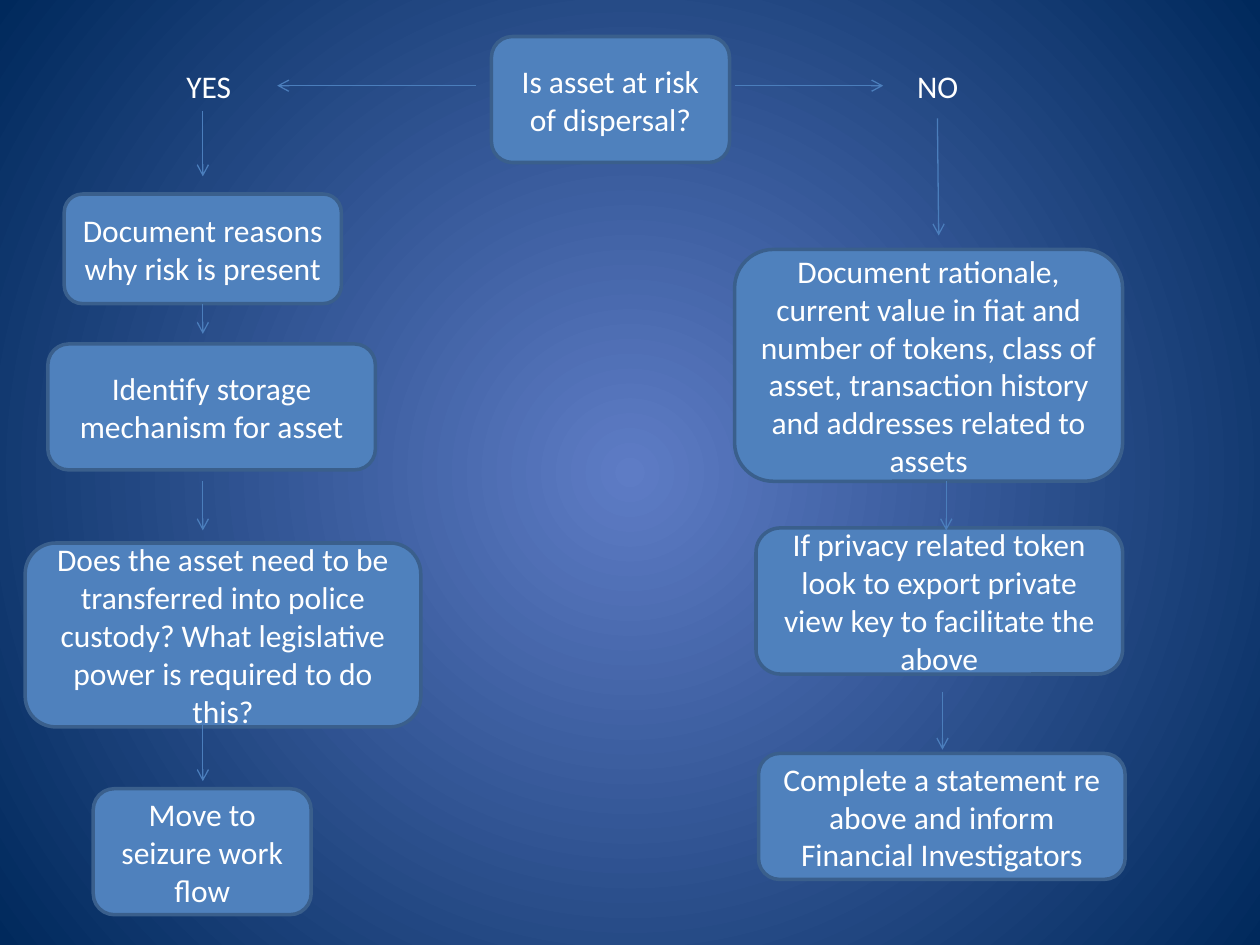
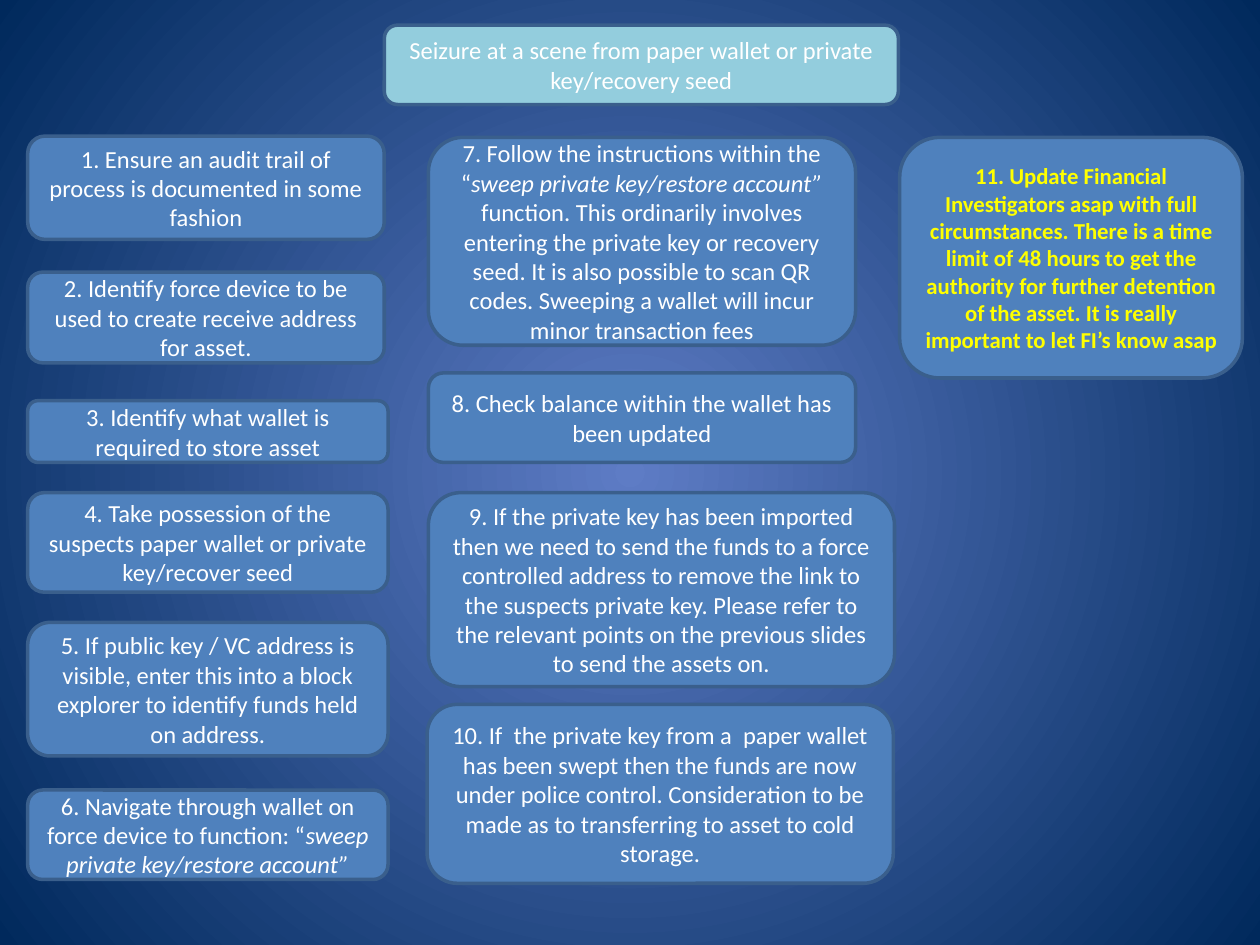
from dataclasses import dataclass

import pptx
import pptx.dml.color
import pptx.enum.shapes
import pptx.enum.text
import pptx.oxml.ns
import pptx.oxml.xmlchemy
import pptx.presentation
import pptx.shapes.autoshape
import pptx.shapes.connector
import pptx.slide
import pptx.text.text
import pptx.util
from lxml import etree
from pptx.util import Inches

FONT = "Calibri"
WHITE = "FFFFFF"
YELLOW = "FFFF00"
BOX_FILL = "4F81BD"
BOX_LINE = "3A5F8C"
HEADING_FILL = "93CDDD"
ARROW_LINE = "4B7EBC"
GLOW_CENTRE = "5E7CC5"
GLOW_EDGE = "00295C"

YES_X = 1.61
ANSWER_Y = 0.68
BOTTOM = 2


@dataclass(frozen=True)
class Box:
    text: str
    left: float
    top: float
    width: float
    height: float
    size: int = 18
    fill: str = BOX_FILL
    color: str = WHITE
    bold: bool = False


@dataclass(frozen=True)
class Answer:
    text: str
    left: float
    width: float


@dataclass(frozen=True)
class Arrow:
    begin_x: float
    begin_y: float
    end_x: float
    end_y: float


REASONS_BOX = Box("Document reasons why risk is present", 0.51, 1.54, 2.2, 0.87)

DECISION_BOXES = [
    Box("Is asset at risk of dispersal?", 3.9, 0.29, 1.89, 1),
    Box("Identify storage mechanism for asset", 0.38, 2.73, 2.6, 1),
    Box("Does the asset need to be transferred into police custody? "
        "What legislative power is required to do this?", 0.2, 4.31, 3.14, 1.46),
    Box("Move to seizure work flow", 0.74, 6.26, 1.73, 1),
    Box("Document rationale, current value in fiat and number of tokens, class of asset, "
        "transaction history and addresses related to assets", 5.83, 1.98, 3.08, 1.84),
    Box("If privacy related token look to export private view key to facilitate the above",
        6, 4.19, 2.91, 1.16),
    Box("Complete a statement re above and inform Financial Investigators",
        6.02, 5.98, 2.91, 1),
]

ANSWERS = [Answer("YES", 1.38, 0.71), Answer("NO", 7.18, 0.67)]

REASONS_ARROW = Arrow(YES_X, 2.41, YES_X, 2.65)

DECISION_ARROWS = [
    Arrow(3.78, ANSWER_Y, 2.2, ANSWER_Y),
    Arrow(5.83, ANSWER_Y, 7.01, ANSWER_Y),
    Arrow(YES_X, 0.88, YES_X, 1.4),
    Arrow(YES_X, 3.82, YES_X, 4.21),
    Arrow(YES_X, 5.69, YES_X, 6.2),
    Arrow(7.44, 0.94, 7.45, 1.87),
    Arrow(7.51, 3.82, 7.51, 4.21),
    Arrow(7.48, 5.49, 7.48, 5.95),
]

SEIZURE_HEADING = Box("Seizure at a scene from paper wallet or private key/recovery seed",
                      3.05, 0.2, 4.08, 0.63, 14, HEADING_FILL)

SEIZURE_STEPS = [
    Box("1. Ensure an audit trail of process is documented in some fashion",
        0.22, 1.08, 2.83, 0.82, 14),
    Box("2. Identify force device to be used to create receive address for asset.",
        0.22, 2.16, 2.83, 0.72, 14),
    Box("3. Identify what wallet is required to store asset", 0.22, 3.18, 2.86, 0.49, 14),
    Box("4. Take possession of the suspects paper wallet or private key/recover seed",
        0.22, 3.91, 2.86, 0.79, 14),
    Box("5. If public key / VC address is visible, enter this into a block explorer "
        "to identify funds held on address.", 0.22, 4.94, 2.86, 1.06, 14),
    Box("6. Navigate through wallet on force device to function: "
        "“*sweep private key/restore account”*", 0.22, 6.27, 2.86, 0.71, 14),
    Box("7. Follow the instructions within the “*sweep private key/restore account” *"
        "function. This ordinarily involves entering the private key or recovery seed. "
        "It is also possible to scan QR codes. Sweeping a wallet will incur minor "
        "transaction fees", 3.4, 1.09, 3.39, 1.65, 14),
    Box("8. Check balance within the wallet has been updated", 3.4, 2.96, 3.39, 0.71, 14),
    Box("9. If the private key has been imported then we need to send the funds to a force "
        "controlled address to remove the link to the suspects private key. Please refer to "
        "the relevant points on the previous slides to send the assets on.",
        3.4, 3.91, 3.7, 1.54, 14),
    Box("10. If  the private key from a  paper wallet has been swept then the funds are now "
        "under police control. Consideration to be made as to transferring to asset to cold "
        "storage.", 3.39, 5.59, 3.7, 1.42, 14),
    Box("11. Update Financial Investigators asap with full circumstances. There is a time "
        "limit of 48 hours to get the authority for further detention of the asset. It is "
        "really important to let FI’s know asap",
        7.14, 1.09, 2.72, 1.91, 13, color=YELLOW, bold=True),
]


def rgb(value: str) -> pptx.dml.color.RGBColor:
    return pptx.dml.color.RGBColor.from_string(value)


def style_paragraph(para: pptx.text.text._Paragraph, size: int, color: str, bold: bool) -> None:
    para.font.name = FONT
    para.font.size = pptx.util.Pt(size)
    para.font.bold = bold
    para.font.color.rgb = rgb(color)


def paint_background(master: pptx.slide.SlideMaster) -> None:
    fill = master.background.fill
    fill.gradient()
    for stop, color, position in zip(fill.gradient_stops, (GLOW_CENTRE, GLOW_EDGE), (0, 1)):
        stop.color.rgb = rgb(color)
        stop.position = position
    qn = pptx.oxml.ns.qn
    linear = master.element.find(f".//{qn('p:bg')}//{qn('a:lin')}")
    gradient = linear.getparent()
    radial = etree.SubElement(gradient, qn("a:path"), {"path": "circle"})
    etree.SubElement(radial, qn("a:fillToRect"), dict.fromkeys("ltrb", "50000"))
    gradient.replace(linear, radial)


def draw_box(page: pptx.slide.Slide, box: Box) -> pptx.shapes.autoshape.Shape:
    shape = page.shapes.add_shape(
        pptx.enum.shapes.MSO_SHAPE.ROUNDED_RECTANGLE,
        Inches(box.left), Inches(box.top), Inches(box.width), Inches(box.height))
    shape.shadow.inherit = False
    shape.fill.solid()
    shape.fill.fore_color.rgb = rgb(box.fill)
    shape.line.color.rgb = rgb(BOX_LINE)
    shape.line.width = pptx.util.Pt(2)
    frame = shape.text_frame
    frame.word_wrap = True
    frame.vertical_anchor = pptx.enum.text.MSO_ANCHOR.MIDDLE
    para = frame.paragraphs[0]
    para.alignment = pptx.enum.text.PP_ALIGN.CENTER
    style_paragraph(para, box.size, box.color, box.bold)
    for index, words in enumerate(box.text.split("*")):
        if words:
            span = para.add_run()
            span.text = words
            if index % 2:
                span.font.italic = True
    return shape


def draw_answer(page: pptx.slide.Slide, answer: Answer) -> None:
    label = page.shapes.add_textbox(
        Inches(answer.left), Inches(0.48), Inches(answer.width), Inches(0.4))
    frame = label.text_frame
    frame.word_wrap = True
    frame.auto_size = pptx.enum.text.MSO_AUTO_SIZE.SHAPE_TO_FIT_TEXT
    frame.text = answer.text
    style_paragraph(frame.paragraphs[0], 18, WHITE, False)


def draw_arrow(page: pptx.slide.Slide, arrow: Arrow) -> pptx.shapes.connector.Connector:
    connector = page.shapes.add_connector(
        pptx.enum.shapes.MSO_CONNECTOR.STRAIGHT,
        Inches(arrow.begin_x), Inches(arrow.begin_y), Inches(arrow.end_x), Inches(arrow.end_y))
    connector.line.color.rgb = rgb(ARROW_LINE)
    connector.line.width = pptx.util.Pt(0.75)
    qn = pptx.oxml.ns.qn
    properties = connector.element.spPr
    etree.SubElement(properties.find(qn("a:ln")), qn("a:tailEnd"), {"type": "arrow"})
    etree.SubElement(properties, qn("a:effectLst"))
    return connector


def add_page(deck: pptx.presentation.Presentation) -> pptx.slide.Slide:
    return deck.slides.add_slide(deck.slide_layouts.get_by_name("Blank"))


def build_decision_page(deck: pptx.presentation.Presentation) -> None:
    page = add_page(deck)
    reasons = draw_box(page, REASONS_BOX)
    for box in DECISION_BOXES:
        draw_box(page, box)
    for answer in ANSWERS:
        draw_answer(page, answer)
    draw_arrow(page, REASONS_ARROW).begin_connect(reasons, BOTTOM)
    for arrow in DECISION_ARROWS:
        draw_arrow(page, arrow)


def build_seizure_page(deck: pptx.presentation.Presentation) -> None:
    page = add_page(deck)
    for box in [SEIZURE_HEADING, *SEIZURE_STEPS]:
        draw_box(page, box)


def main() -> None:
    deck = pptx.Presentation()
    deck.slide_width = Inches(10)
    deck.slide_height = Inches(7.5)
    paint_background(deck.slide_master)
    build_decision_page(deck)
    build_seizure_page(deck)
    deck.save("out.pptx")


if __name__ == "__main__":
    main()
